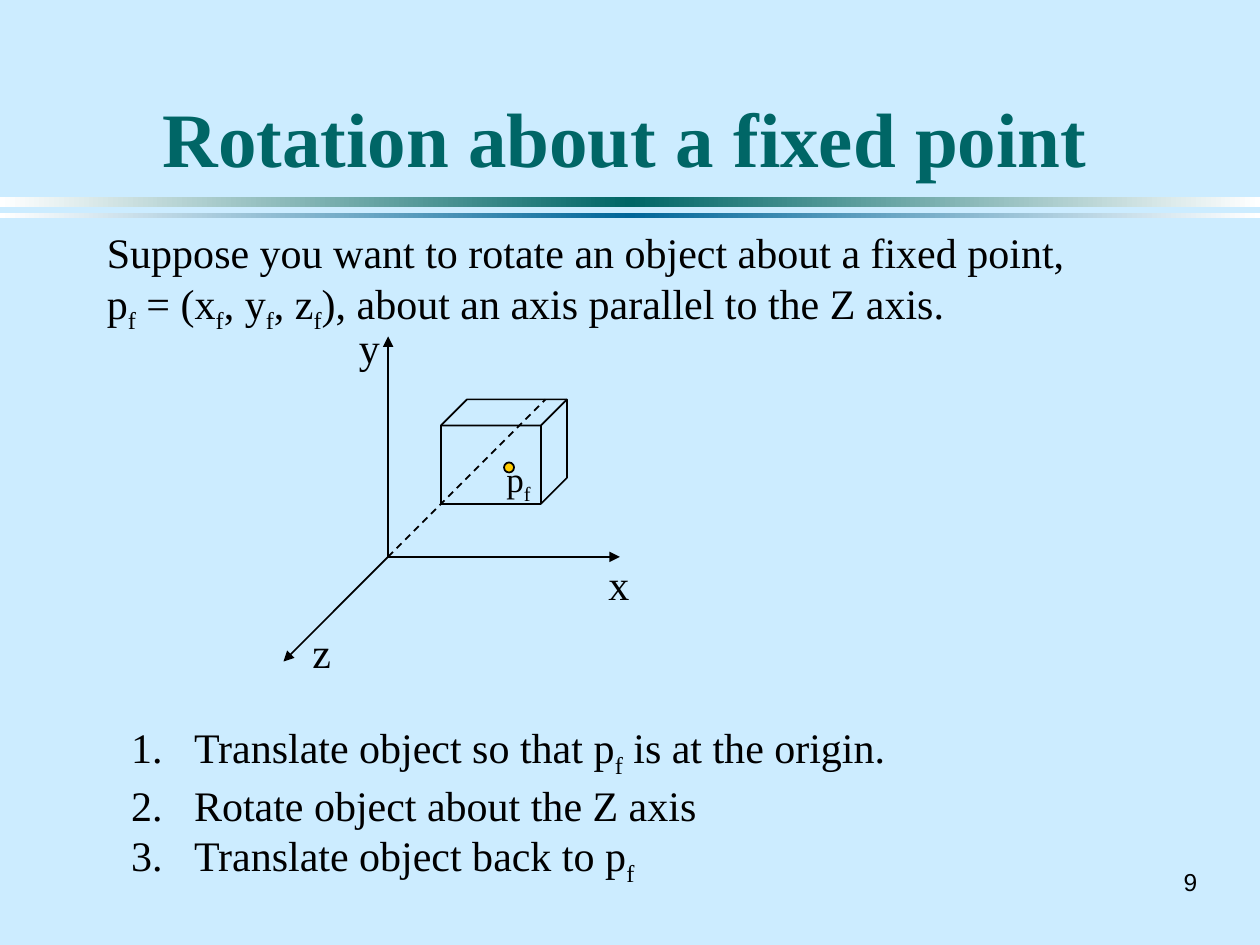
"""Build a slide on rotating an object about a fixed point."""
from copy import deepcopy

from lxml import etree
from pptx import Presentation
from pptx.dml.color import RGBColor
from pptx.enum.dml import MSO_LINE
from pptx.enum.shapes import MSO_CONNECTOR, MSO_SHAPE
from pptx.enum.text import MSO_ANCHOR, MSO_AUTO_SIZE, PP_ALIGN
from pptx.oxml.ns import qn
from pptx.util import Inches, Pt

CUBE, OVAL, RECTANGLE = MSO_SHAPE.CUBE, MSO_SHAPE.OVAL, MSO_SHAPE.RECTANGLE
STRAIGHT = MSO_CONNECTOR.STRAIGHT
DASH = MSO_LINE.DASH
LEFT, CENTER, RIGHT = PP_ALIGN.LEFT, PP_ALIGN.CENTER, PP_ALIGN.RIGHT
TOP, MIDDLE, BOTTOM = MSO_ANCHOR.TOP, MSO_ANCHOR.MIDDLE, MSO_ANCHOR.BOTTOM
NO_AUTOFIT = MSO_AUTO_SIZE.NONE

THEME = {
    "serif": "Times New Roman", "sans": "Arial",
    "background": "CCECFF", "title": "006666", "ink": "000000",
    "point": "FFCC00", "band_edge": "FFFFFF",
    "title_size": 44, "body_size": 24, "point_size": 20, "number_size": 14,
    "line": 1, "subscript": "-25000",
}

SUBSCRIPT_MARK = "|"
TITLE = "Rotation about a fixed point"
TITLE_BOX = (0.67, 0.25, 8.58, 1.25)
INTRO = ("Suppose you want to rotate an object about a fixed point, "
         "p|f| = (x|f|, y|f|, z|f|), about an axis parallel to the Z axis.")
INTRO_BOX = (0.75, 1.75, 7.92, 1.3)
STEPS = [
    "Translate object so that p|f| is at the origin.",
    "Rotate object about the Z axis",
    "Translate object back to p|f",
]
STEPS_BOX = (0.94, 5.68, 7.48, 1.3)
BANDS = [((0, 1.56, 10, 0.08), "006666"), ((0, 1.69, 10, 0.04), "006699")]
ORIGIN = (3.08, 4.42)
AXIS_ENDS = [(3.08, 2.67), (4.92, 4.42), (2.25, 5.25)]
DIAGONAL_END = (4.33, 3.17)
CUBE_BOX = (3.5, 3.17, 1, 0.83)
POINT_BOX = (4, 3.67, 0.08, 0.08)
POINT_LABEL = ("p|f", (3.92, 3.58, 0.6, 0.43))
AXIS_LABELS = [
    ("x", (4.73, 4.38, 0.37, 0.5)),
    ("y", (2.75, 2.5, 0.37, 0.5)),
    ("z", (2.38, 4.92, 0.35, 0.5)),
]
SLIDE_NUMBER = ("9", (9.17, 6.83, 0.43, 0.33))


def color(name):
    return RGBColor.from_string(THEME.get(name, name))


def place(shape, box):
    shape.left, shape.top, shape.width, shape.height = map(Inches, box)


def write(shape, texts, size="body_size", font="serif", ink="ink",
          bold=False, align=LEFT, anchor=TOP, wrap=True):
    frame = shape.text_frame
    frame.text = "\n".join(text.replace(SUBSCRIPT_MARK, "") for text in texts)
    frame.word_wrap = wrap
    frame.auto_size = NO_AUTOFIT
    frame.vertical_anchor = anchor
    for paragraph, text in zip(frame.paragraphs, texts):
        paragraph.alignment = align
        paragraph.space_before = Pt(0)
        paragraph.text = ""
        for index, part in enumerate(text.split(SUBSCRIPT_MARK)):
            run = paragraph.add_run()
            run.text = part
            run.font.name = THEME[font]
            run.font.size = Pt(THEME[size])
            run.font.bold = bold
            run.font.color.rgb = color(ink)
            if index % 2:
                run.font._element.set("baseline", THEME["subscript"])


def add_text(slide, text, box, **style):
    write(slide.shapes.add_textbox(*map(Inches, box)), [text], **style)


def number_steps(shape):
    for paragraph in shape.text_frame.paragraphs:
        properties = paragraph._p.get_or_add_pPr()
        properties.set("marL", str(Inches(0.5)))
        properties.set("indent", str(Inches(-0.5)))
        etree.SubElement(properties, qn("a:buFont"), typeface=THEME["serif"])
        etree.SubElement(properties, qn("a:buAutoNum"), type="arabicPeriod")


def add_shape(slide, kind, box):
    shape = slide.shapes.add_shape(kind, *map(Inches, box))
    shape.shadow.inherit = False
    shape.fill.background()
    shape.line.color.rgb = color("ink")
    shape.line.width = Pt(THEME["line"])
    return shape


def add_band(slide, box, middle):
    band = add_shape(slide, RECTANGLE, box)
    band.line.fill.background()
    band.fill.gradient()
    band.fill.gradient_angle = 0
    stop_list = next(band._element.iter(qn("a:gsLst")))
    stop_list.append(deepcopy(stop_list[0]))
    names = ("band_edge", middle, "band_edge")
    for stop, position, name in zip(band.fill.gradient_stops, (0, 0.5, 1), names):
        stop.position = position
        stop.color.rgb = color(name)


def add_line(slide, end, arrow=True):
    line = slide.shapes.add_connector(STRAIGHT, *map(Inches, ORIGIN + end))
    line.line.color.rgb = color("ink")
    line.line.width = Pt(THEME["line"])
    if arrow:
        etree.SubElement(line.line._get_or_add_ln(), qn("a:tailEnd"), type="triangle")
    else:
        line.line.dash_style = DASH
    etree.SubElement(line._element.spPr, qn("a:effectLst"))


def main():
    presentation = Presentation()
    presentation.slide_width, presentation.slide_height = Inches(10), Inches(7.5)
    slide = presentation.slides.add_slide(presentation.slide_layouts[1])
    slide.background.fill.solid()
    slide.background.fill.fore_color.rgb = color("background")

    for box, middle in BANDS:
        add_band(slide, box, middle)

    title, steps = slide.placeholders
    place(title, TITLE_BOX)
    write(title, [TITLE], size="title_size", ink="title", bold=True,
          align=CENTER, anchor=BOTTOM)
    place(steps, STEPS_BOX)
    write(steps, STEPS)
    number_steps(steps)
    add_text(slide, INTRO, INTRO_BOX)

    add_shape(slide, CUBE, CUBE_BOX).adjustments[0] = 0.25
    for end in AXIS_ENDS:
        add_line(slide, end)
    add_line(slide, DIAGONAL_END, arrow=False)
    point = add_shape(slide, OVAL, POINT_BOX)
    point.fill.solid()
    point.fill.fore_color.rgb = color("point")

    add_text(slide, *POINT_LABEL, size="point_size")
    for text, box in AXIS_LABELS:
        add_text(slide, text, box, wrap=False)
    add_text(slide, *SLIDE_NUMBER, size="number_size", font="sans",
             align=RIGHT, anchor=MIDDLE, wrap=False)
    presentation.save("out.pptx")


if __name__ == "__main__":
    main()
